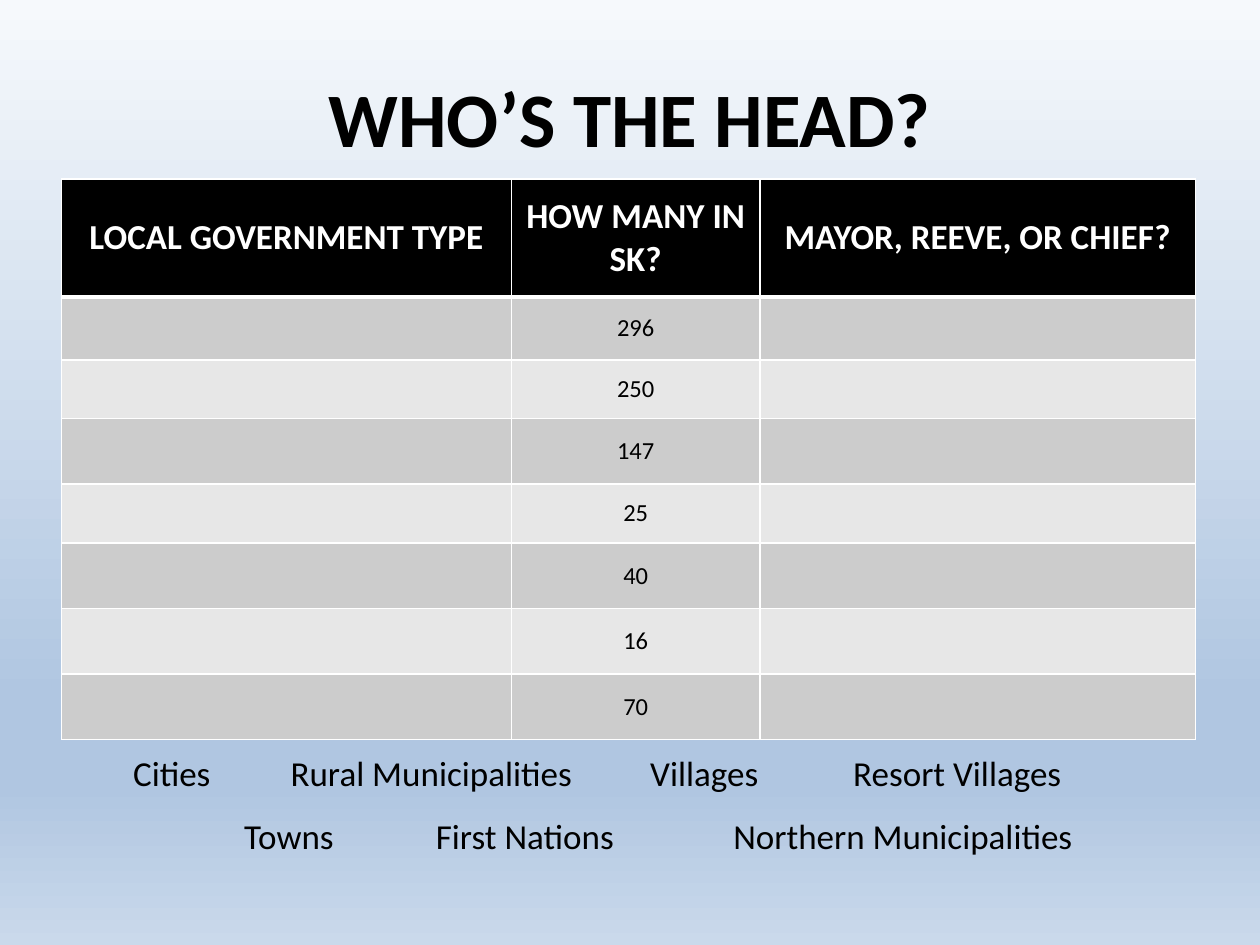
from copy import deepcopy

from lxml.etree import SubElement
from pptx import Presentation
from pptx.dml.color import RGBColor
from pptx.enum.text import MSO_ANCHOR as Anchor, PP_ALIGN as Align
from pptx.oxml.ns import qn
from pptx.util import Pt

FONT = "Calibri"
BLACK, WHITE = "000000", "FFFFFF"
BANDS = ("CCCCCC", "E7E7E7")
BACKGROUND = [(0, "F6F9FC"), (0.74, "B0C6E1"), (0.83, "B0C6E1"), (1, "CAD9EB")]

TITLE = "WHO’S THE HEAD?"
HEADINGS = ["LOCAL GOVERNMENT TYPE", "HOW MANY IN SK?", "MAYOR, REEVE, OR CHIEF?"]
COUNTS = [296, 250, 147, 25, 40, 16, 70]
COLUMN_WIDTHS = [257, 142, 249]
ROW_HEIGHTS = [67.5, 36, 33.5, 37.5, 33.5, 37.5, 37.5, 37.5]

# Each line of the word bank: (distance from the text's left edge, word)
WORD_BANK = [
    [(0, "Cities"), (90, "Rural Municipalities"), (295.5, "Villages"), (411.5, "Resort Villages")],
    [(63.5, "Towns"), (173, "First Nations"), (343, "Northern Municipalities")],
]


def rgb(hex_colour):
    return RGBColor.from_string(hex_colour)


def style(paragraph, size, colour=BLACK, bold=False, align=Align.LEFT):
    paragraph.alignment = align
    for run in paragraph.runs:
        font = run.font
        font.name, font.size, font.bold = FONT, Pt(size), bold
        font.color.rgb = rgb(colour)


def paint_background(slide):
    fill = slide.background.fill
    fill.gradient()
    fill.gradient_angle = 270
    stop_list = next(slide.background._cSld.iter(qn("a:gsLst")))
    while len(stop_list) < len(BACKGROUND):
        stop_list.append(deepcopy(stop_list[0]))
    for stop, (position, colour) in zip(fill.gradient_stops, BACKGROUND):
        stop.position = position
        stop.color.rgb = rgb(colour)


def add_borders(cell, top, bottom):
    """Draw white cell borders, which must come before the fill in the XML."""
    properties = cell._tc.get_or_add_tcPr()
    for side, width in (("L", 1), ("R", 1), ("T", top), ("B", bottom)):
        line = SubElement(properties, qn(f"a:ln{side}"), w=str(Pt(width)))
        solid = SubElement(line, qn("a:solidFill"))
        SubElement(solid, qn("a:srgbClr"), val=WHITE)


def add_text_box(slide, left, top, width, height):
    frame = slide.shapes.add_textbox(Pt(left), Pt(top), Pt(width), Pt(height)).text_frame
    frame.word_wrap = True
    return frame


def add_title(slide):
    frame = add_text_box(slide, 36, 21.5, 648, 90)
    frame.vertical_anchor = Anchor.MIDDLE
    frame.text = TITLE
    style(frame.paragraphs[0], 44, bold=True, align=Align.CENTER)


def add_government_table(slide):
    rows = [HEADINGS] + [["", str(count), ""] for count in COUNTS]
    table = slide.shapes.add_table(
        len(rows), len(HEADINGS), Pt(35.25), Pt(102.25),
        Pt(sum(COLUMN_WIDTHS)), Pt(sum(ROW_HEIGHTS))).table
    for column, width in zip(table.columns, COLUMN_WIDTHS):
        column.width = Pt(width)
    for r, (row, height) in enumerate(zip(rows, ROW_HEIGHTS)):
        table.rows[r].height = Pt(height)
        heading = r == 0
        for c, text in enumerate(row):
            cell = table.cell(r, c)
            add_borders(cell, top=3 if r == 1 else 1, bottom=3 if heading else 1)
            cell.fill.solid()
            cell.fill.fore_color.rgb = rgb(BLACK if heading else BANDS[(r - 1) % 2])
            cell.vertical_anchor = Anchor.MIDDLE
            cell.text = text
            style(cell.text_frame.paragraphs[0], 20 if heading else 14,
                  WHITE if heading else BLACK, heading, Align.CENTER)


def add_word_bank(slide):
    frame = add_text_box(slide, 69, 414, 582, 80)
    frame.text = "\n".join(
        "".join(("\t" if stop else "") + word for stop, word in line) for line in WORD_BANK)
    for paragraph, line in zip(frame.paragraphs, WORD_BANK):
        paragraph.line_spacing = 1.5
        style(paragraph, 20)
        tabs = SubElement(paragraph._p.get_or_add_pPr(), qn("a:tabLst"))
        for stop, _ in line:
            if stop:
                SubElement(tabs, qn("a:tab"), pos=str(Pt(stop)), algn="l")


def main():
    deck = Presentation()
    deck.slide_width, deck.slide_height = Pt(720), Pt(540)
    slide = deck.slides.add_slide(deck.slide_layouts[6])
    paint_background(slide)
    add_title(slide)
    add_government_table(slide)
    add_word_bank(slide)
    deck.save("out.pptx")


if __name__ == "__main__":
    main()
